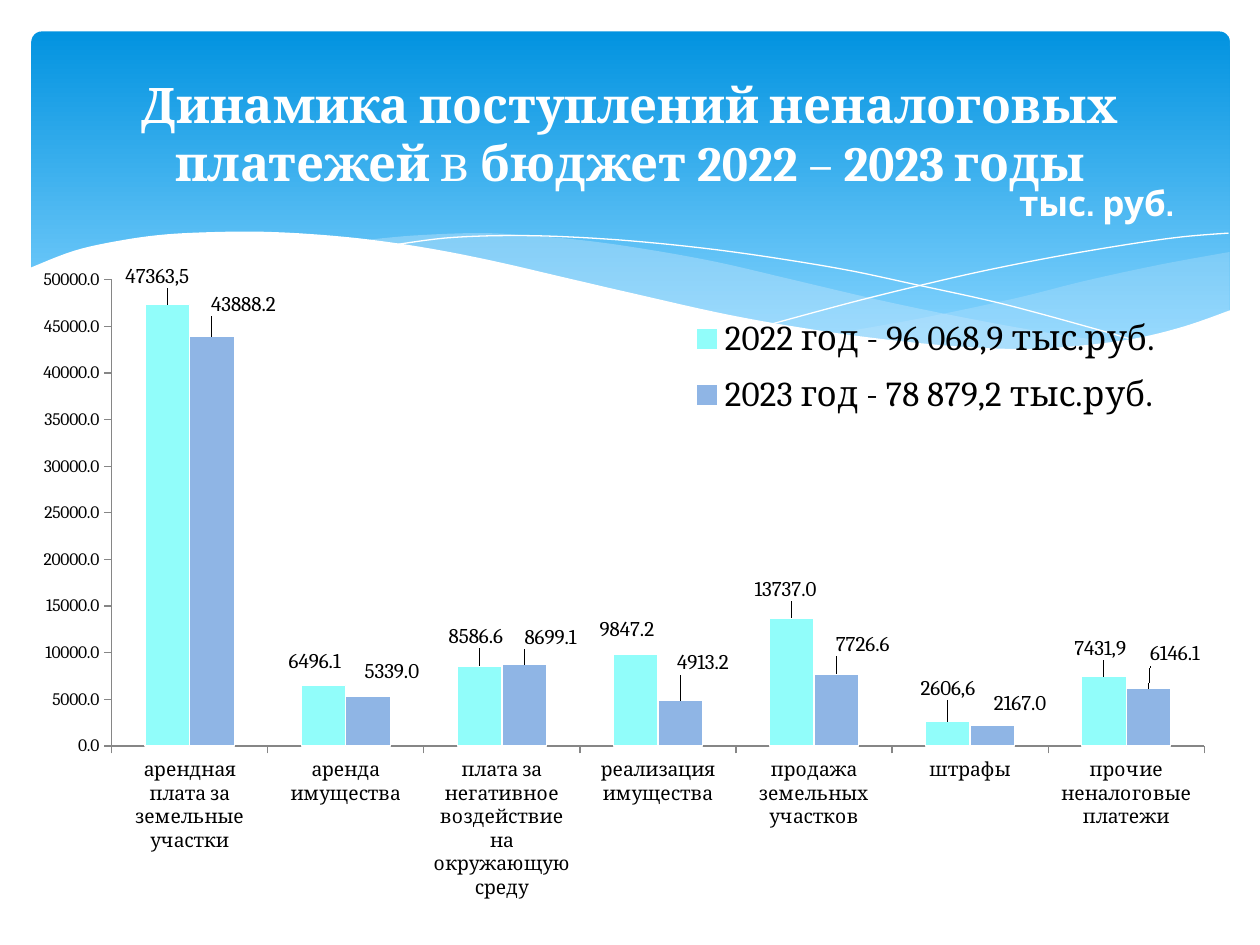
from dataclasses import dataclass
from itertools import chain

from lxml import etree
from pptx import Presentation
from pptx import util as u
from pptx.chart import data
from pptx.dml import color
from pptx.enum import chart as ch
from pptx.enum import shapes, text
from pptx.oxml import ns


@dataclass(frozen=True)
class Theme:
    white: str = "FFFFFF"
    black: str = "000000"
    axis: str = "868686"
    sky_top: str = "0293E0"
    sky_bottom: str = "83D3FE"
    mist: str = "C6E7FC"
    year_colors: tuple = ("91FDFA", "8FB5E5")
    serif: str = "Cambria"
    sans: str = "Cabin"
    title: int = 28
    unit: int = 20
    legend: int = 20
    label: int = 12
    category: int = 11
    scale: int = 10


@dataclass(frozen=True)
class Box:
    left: float
    top: float
    width: float
    height: float

    def inches(self):
        return [u.Inches(v) for v in (self.left, self.top, self.width, self.height)]


THEME = Theme()

RIGHT_MIST = [
    [(9.76, 2), (9.21, 2.1), (8.61, 2.23), (8.05, 2.37), (7.29, 2.53), (6.61, 2.65)],
    [(6.61, 2.65), (7.19, 2.72), (7.69, 2.77), (8.14, 2.78), (8.63, 2.75),
     (9.05, 2.69), (9.42, 2.59), (9.76, 2.47)],
]
CENTRE_MIST = [
    [(8.93, 2.73), (8.37, 2.65), (7.75, 2.54), (7.06, 2.4), (6.29, 2.22), (5.69, 2.08),
     (5.14, 1.98), (4.65, 1.91), (4.2, 1.87), (3.8, 1.85), (3.28, 1.87), (2.86, 1.91)],
    [(2.86, 1.91), (3.42, 1.99), (4.04, 2.11), (4.49, 2.22), (5.3, 2.4), (6.01, 2.55),
     (6.65, 2.66), (7.22, 2.74), (7.73, 2.77), (8.18, 2.78), (8.57, 2.77), (8.93, 2.73)],
]
FALLING_LINE = [
    [(3.09, 1.95), (3.53, 1.89), (4.01, 1.87), (4.5, 1.88), (5.1, 1.92), (5.82, 2),
     (6.65, 2.13), (7.27, 2.26), (7.95, 2.41), (8.69, 2.61), (9.07, 2.72)],
]
RISING_LINE = [
    [(6.13, 2.57), (6.72, 2.41), (7.2, 2.29), (7.76, 2.16), (8.36, 2.04), (8.95, 1.94),
     (9.38, 1.88), (9.75, 1.85)],
]
WHITE_WAVE = [
    [(9.77, 2.46), (9.4, 2.59), (8.99, 2.69), (8.5, 2.75), (8.09, 2.77), (7.61, 2.75),
     (7.08, 2.7), (6.48, 2.62), (5.79, 2.5), (5.03, 2.33), (4.47, 2.2), (3.91, 2.07),
     (3.4, 1.97), (2.92, 1.9), (2.5, 1.86), (2.11, 1.84), (1.77, 1.84), (1.32, 1.86),
     (0.95, 1.91), (0.59, 1.99), (0.23, 2.13)],
    [(0.23, 2.13), (0.23, 3.29)],
    [(0.23, 3.29), (9.77, 3.29)],
]

CATEGORIES = [
    "арендная плата за земельные участки",
    "аренда имущества",
    "плата за негативное воздействие на окружающую среду",
    "реализация имущества",
    "продажа земельных участков",
    "штрафы",
    "прочие неналоговые платежи",
]
YEARS = {
    "2022 год - 96 068,9 тыс.руб.": [47363.5, 6496.1, 8586.6, 9847.2, 13737, 2606.6, 7431.9],
    "2023 год - 78 879,2 тыс.руб.": [43888.2, 5339, 8699.1, 4913.2, 7726.6, 2167, 6146.1],
}
LABEL_SHIFTS = [
    [(-0.08, -0.09), (-0.07, -0.05), (-0.03, -0.1), (-0.07, -0.06), (-0.05, -0.09),
     (0, -0.13), (-0.03, -0.09)],
    [(0.25, -0.12), (0.19, -0.06), (0.21, -0.08), (0.18, -0.16), (0.21, -0.1),
     (0.22, -0.04), (0.21, -0.14)],
]
COMMA_LABELS = {(0, 0): "47363,5", (0, 5): "2606,6", (0, 6): "7431,9"}


def rgb(value):
    return color.RGBColor.from_string(value)


def style_font(font, fill=THEME.black, **formats):
    for key, value in formats.items():
        setattr(font, key, value)
    font.color.rgb = rgb(fill)


def smooth(points, steps=6):
    if len(points) == 2:
        return points
    padded = [points[0], *points, points[-1]]
    curve = [points[0]]
    for a, b, c, d in zip(padded, padded[1:], padded[2:], padded[3:]):
        for t in (step / steps for step in range(1, steps + 1)):
            curve.append(tuple(
                (2 * q + (r - p) * t + (2 * p - 5 * q + 4 * r - s) * t**2
                 + (3 * q - p - 3 * r + s) * t**3) / 2
                for p, q, r, s in zip(a, b, c, d)))
    return curve


def add_wave(slide, box, edges, fill=None, opacity=100):
    outline = [(u.Inches(box.left + x), u.Inches(box.top + y))
               for x, y in chain.from_iterable(map(smooth, edges))]
    builder = slide.shapes.build_freeform(*outline[0])
    builder.add_line_segments(outline[1:], close=fill is not None)
    wave = builder.convert_to_shape()
    wave.shadow.inherit = False
    if fill is None:
        wave.fill.background()
        wave.line.color.rgb = rgb(THEME.white)
        wave.line.width = u.Pt(0)
        return
    wave.fill.solid()
    wave.fill.fore_color.rgb = rgb(fill)
    wave.line.fill.background()
    if opacity < 100:
        tint = wave.fill._xPr.find(".//" + ns.qn("a:srgbClr"))
        etree.SubElement(tint, ns.qn("a:alpha"), val=str(opacity * 1000))


def add_banner(slide, box):
    sky_box = Box(box.left + 0.25, box.top + 0.25, 9.51, 2.7)
    sky = slide.shapes.add_shape(shapes.MSO_SHAPE.ROUNDED_RECTANGLE, *sky_box.inches())
    sky.adjustments[0] = 0.03
    sky.shadow.inherit = False
    sky.line.fill.background()
    sky.fill.gradient()
    sky.fill.gradient_angle = 270
    stops = ((0, THEME.sky_top), (0.9, THEME.sky_bottom))
    for stop, (position, tone) in zip(sky.fill.gradient_stops, stops):
        stop.position = position
        stop.color.rgb = rgb(tone)
    add_wave(slide, box, RIGHT_MIST, THEME.mist, 29)
    add_wave(slide, box, CENTRE_MIST, THEME.mist, 40)
    add_wave(slide, box, FALLING_LINE)
    add_wave(slide, box, RISING_LINE)
    add_wave(slide, box, WHITE_WAVE, THEME.white)


def add_text(slide, box, runs, size, face, align, anchor, shadow=False):
    frame = slide.shapes.add_textbox(*box.inches()).text_frame
    frame.word_wrap = True
    frame.vertical_anchor = anchor
    paragraph = frame.paragraphs[0]
    paragraph.alignment = align
    for wording, bold in runs:
        run = paragraph.add_run()
        run.text = wording
        style_font(run.font, THEME.white, size=u.Pt(size), name=face, bold=bold)
        if shadow:
            effects = etree.Element(ns.qn("a:effectLst"))
            drop = etree.SubElement(effects, ns.qn("a:outerShdw"), blurRad="38100",
                                    dist="38100", dir="2700000", algn="tl")
            tone = etree.SubElement(drop, ns.qn("a:srgbClr"), val=THEME.black)
            etree.SubElement(tone, ns.qn("a:alpha"), val="43000")
            run.font._rPr.find(ns.qn("a:solidFill")).addnext(effects)


def set_layout(parent, index, **values):
    for old in parent.findall(ns.qn("c:layout")):
        parent.remove(old)
    layout = etree.Element(ns.qn("c:layout"))
    manual = etree.SubElement(layout, ns.qn("c:manualLayout"))
    for key, value in values.items():
        etree.SubElement(manual, ns.qn("c:" + key), val=str(value))
    parent.insert(index, layout)


def add_labels(series, row, box):
    look = {"size": u.Pt(THEME.label), "name": THEME.serif}
    labels = series.data_labels
    labels.show_value = True
    labels.number_format = "0.0"
    labels.number_format_is_linked = False
    style_font(labels.font, **look)
    for column, (dx, dy) in enumerate(LABEL_SHIFTS[row]):
        label = series.points[column].data_label
        wording = COMMA_LABELS.get((row, column))
        if wording:
            run = label.text_frame.paragraphs[0].add_run()
            run.text = wording
            style_font(run.font, **look)
        else:
            style_font(label.font, **look)
        label.position = ch.XL_LABEL_POSITION.OUTSIDE_END
        set_layout(label._get_or_add_dLbl(), 1,
                   x=round(dx / box.width, 4), y=round(dy / box.height, 4))


def add_revenue_chart(slide, box):
    revenue = data.CategoryChartData(number_format="0.0")
    revenue.categories = CATEGORIES
    for year, values in YEARS.items():
        revenue.add_series(year, values)
    chart = slide.shapes.add_chart(
        ch.XL_CHART_TYPE.COLUMN_CLUSTERED, *box.inches(), revenue).chart
    style_font(chart.font, size=u.Pt(18), name=THEME.sans)
    chart.has_title = False
    chart.has_legend = True
    chart.legend.position = ch.XL_LEGEND_POSITION.RIGHT
    chart.legend.include_in_layout = False
    style_font(chart.legend.font, size=u.Pt(THEME.legend), name=THEME.serif)
    set_layout(chart.legend._element, 1, xMode="edge", yMode="edge",
               x=0.55, y=0.11, w=0.4, h=0.19)
    set_layout(chart._chartSpace.chart.plotArea, 0, layoutTarget="inner", xMode="edge",
               yMode="edge", x=0.072, y=0.074, w=0.91, h=0.699)
    for axis, size in ((chart.category_axis, THEME.category), (chart.value_axis, THEME.scale)):
        formats = {"has_major_gridlines": False,
                   "major_tick_mark": ch.XL_TICK_MARK.OUTSIDE,
                   "minor_tick_mark": ch.XL_TICK_MARK.NONE}
        for key, value in formats.items():
            setattr(axis, key, value)
        axis.format.line.color.rgb = rgb(THEME.axis)
        style_font(axis.tick_labels.font, size=u.Pt(size), name=THEME.serif)
    chart.category_axis.tick_label_position = ch.XL_TICK_LABEL_POSITION.LOW
    for key, value in {"minimum_scale": 0, "maximum_scale": 50000, "major_unit": 5000}.items():
        setattr(chart.value_axis, key, value)
    chart.value_axis.tick_labels.number_format = "0.0"
    chart.value_axis.tick_labels.number_format_is_linked = False
    plot = chart.plots[0]
    for key, value in {"gap_width": 150, "overlap": 0, "vary_by_categories": False}.items():
        setattr(plot, key, value)
    for row, series in enumerate(plot.series):
        series.format.fill.solid()
        series.format.fill.fore_color.rgb = rgb(THEME.year_colors[row])
        series.format.line.color.rgb = rgb(THEME.white)
        series.format.line.width = u.Pt(0.75)
        add_labels(series, row, box)


def main():
    deck = Presentation()
    deck.slide_width, deck.slide_height = u.Inches(10), u.Inches(7.5)
    slide = deck.slides.add_slide(deck.slide_layouts[6])
    add_banner(slide, Box(0, 0, 10, 3.3))
    add_revenue_chart(slide, Box(0.2, 1.83, 9.53, 5.31))
    title = [("Динамика поступлений неналоговых платежей", True), (" в ", False),
             ("бюджет 2022", True), (" – ", False), ("2023 годы", True)]
    add_text(slide, Box(0.5, 0.37, 9, 1.37), title, THEME.title, THEME.serif,
             text.PP_ALIGN.CENTER, text.MSO_ANCHOR.MIDDLE, shadow=True)
    add_text(slide, Box(7.99, 1.39, 1.73, 0.44), [("тыс. руб.", True)], THEME.unit,
             THEME.sans, text.PP_ALIGN.LEFT, text.MSO_ANCHOR.TOP)
    deck.save("out.pptx")


if __name__ == "__main__":
    main()
